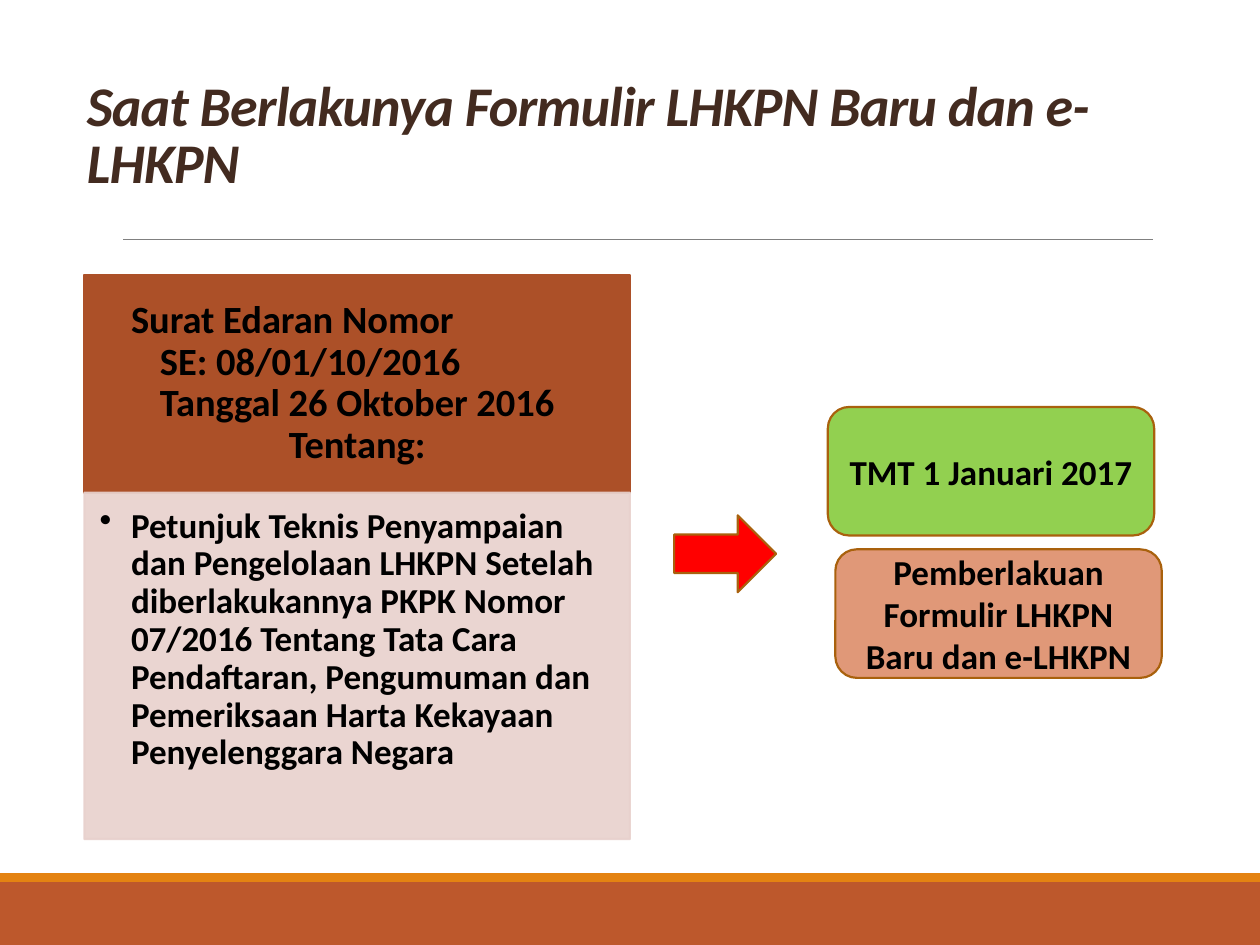
import pptx
import pptx.dml.color
import pptx.enum.shapes
import pptx.enum.text
import pptx.oxml.ns
import pptx.util
from lxml import etree

Inches = pptx.util.Inches
Pt = pptx.util.Pt
Shape = pptx.enum.shapes.MSO_SHAPE
Align = pptx.enum.text.PP_ALIGN
Anchor = pptx.enum.text.MSO_ANCHOR
qn = pptx.oxml.ns.qn

OUTLINE = "A9610D"


def rgb(color):
    return pptx.dml.color.RGBColor.from_string(color)


def paint(fill, color, opacity=100):
    fill.solid()
    fill.fore_color.rgb = rgb(color)
    if opacity < 100:
        # The fill proxy exposes no transparency, so it goes into the XML.
        color_xml = fill.fore_color._xFill.find(qn("a:srgbClr"))
        etree.SubElement(color_xml, qn("a:alpha"), val=str(opacity * 1000))


def add_block(slide, preset, box, color, line=None, opacity=100):
    block = slide.shapes.add_shape(preset, *map(Inches, box))
    block.shadow.inherit = False
    paint(block.fill, color, opacity)
    if line:
        paint(block.line.fill, line, opacity)
        block.line.width = Pt(1.25)
    else:
        block.line.fill.background()
    return block


def set_frame(shape, anchor, insets=(0.1, 0.05, 0.1, 0.05)):
    frame = shape.text_frame
    frame.word_wrap = True
    frame.vertical_anchor = anchor
    (frame.margin_left, frame.margin_top,
     frame.margin_right, frame.margin_bottom) = map(Inches, insets)
    return frame


def write(paragraph, text, size, color="000000", align=Align.LEFT, spacing=1.0):
    paragraph.alignment = align
    paragraph.line_spacing = spacing
    run = paragraph.add_run()
    run.text = text
    run.font.name = "Calibri"
    run.font.size = Pt(size)
    run.font.bold = True
    run.font.color.rgb = rgb(color)
    return run


def indent(paragraph, left, first=0):
    properties = paragraph._p.get_or_add_pPr()
    properties.set("marL", str(Inches(left)))
    properties.set("indent", str(Inches(first)))
    return properties


def add_footer_bands(slide, left, top, width, height):
    stripe = 0.07
    add_block(slide, Shape.RECTANGLE, (left, top + stripe, width, height - stripe), "BD582C")
    add_block(slide, Shape.RECTANGLE, (left, top, width, stripe), "E48312")


def add_title(slide, left, top, width, height):
    title = slide.shapes.add_textbox(*map(Inches, (left, top, width, height)))
    frame = set_frame(title, Anchor.BOTTOM)
    run = write(frame.paragraphs[0], "Saat Berlakunya Formulir LHKPN Baru dan e-LHKPN",
                32, "432B20", spacing=0.85)
    run.font.italic = True
    run._r.get_or_add_rPr().set("spc", "-50")


def add_rule(slide, left, top, width):
    rule = slide.shapes.add_connector(
        pptx.enum.shapes.MSO_CONNECTOR.STRAIGHT,
        *map(Inches, (left, top, left + width, top)))
    paint(rule.line.fill, "808080")
    rule.line.width = Pt(0.5)
    etree.SubElement(rule._element.spPr, qn("a:effectLst"))


def add_circular_letter(slide, left, top, width, height):
    """Header with the letter's number and date, above its subject."""
    header_height = 1.73
    header = add_block(slide, Shape.RECTANGLE, (left, top, width, header_height),
                       "AC5028", "AC5028")
    frame = set_frame(header, Anchor.MIDDLE, (0.17, 0.1, 0.17, 0.1))
    lines = [
        ("Surat Edaran Nomor", Align.LEFT, 0.2),
        ("SE: 08/01/10/2016", Align.LEFT, 0.43),
        ("Tanggal 26 Oktober 2016", Align.LEFT, 0.43),
        ("Tentang:", Align.CENTER, 0),
    ]
    for number, (text, align, left_indent) in enumerate(lines):
        paragraph = frame.paragraphs[0] if number == 0 else frame.add_paragraph()
        write(paragraph, text, 22, align=align, spacing=0.9)
        indent(paragraph, left_indent)

    subject = add_block(
        slide, Shape.RECTANGLE,
        (left, top + header_height, width, height - header_height),
        "E8D1CD", "E8D1CD", opacity=90)
    frame = set_frame(subject, Anchor.TOP, (0.12, 0.12, 0.16, 0.17))
    paragraph = frame.paragraphs[0]
    write(paragraph,
          "Petunjuk Teknis Penyampaian dan Pengelolaan LHKPN Setelah "
          "diberlakukannya PKPK Nomor 07/2016 Tentang Tata Cara Pendaftaran, "
          "Pengumuman dan Pemeriksaan Harta Kekayaan Penyelenggara Negara",
          20, spacing=0.9)
    etree.SubElement(indent(paragraph, 0.25, -0.25), qn("a:buChar"), char="•")


def add_effect(slide, left, top, width, height):
    """Arrow to the effective date and what takes effect."""
    add_block(slide, Shape.RIGHT_ARROW, (left, top + 0.86, 0.81, 0.61), "FF0000", OUTLINE)
    card_width, card_height = 2.59, 1.02
    right, bottom = left + width - card_width, top + height - card_height
    cards = [
        ("TMT 1 Januari 2017", right - 0.06, top, "92D050"),
        ("Pemberlakuan Formulir LHKPN Baru dan e-LHKPN", right, bottom, "E09878"),
    ]
    for text, card_left, card_top, color in cards:
        card = add_block(slide, Shape.ROUNDED_RECTANGLE,
                         (card_left, card_top, card_width, card_height), color, OUTLINE)
        frame = set_frame(card, Anchor.MIDDLE)
        write(frame.paragraphs[0], text, 20, align=Align.CENTER)


def main():
    deck = pptx.Presentation()
    deck.slide_width, deck.slide_height = Inches(10), Inches(7.5)
    slide = deck.slides.add_slide(deck.slide_layouts[6])
    add_footer_bands(slide, 0, 6.93, 10, 0.57)
    add_rule(slide, 0.98, 1.9, 8.17)
    add_circular_letter(slide, 0.67, 2.18, 4.33, 4.48)
    add_title(slide, 0.59, 0.68, 8.99, 0.92)
    add_effect(slide, 5.35, 3.23, 3.87, 2.15)
    deck.save("out.pptx")


if __name__ == "__main__":
    main()
